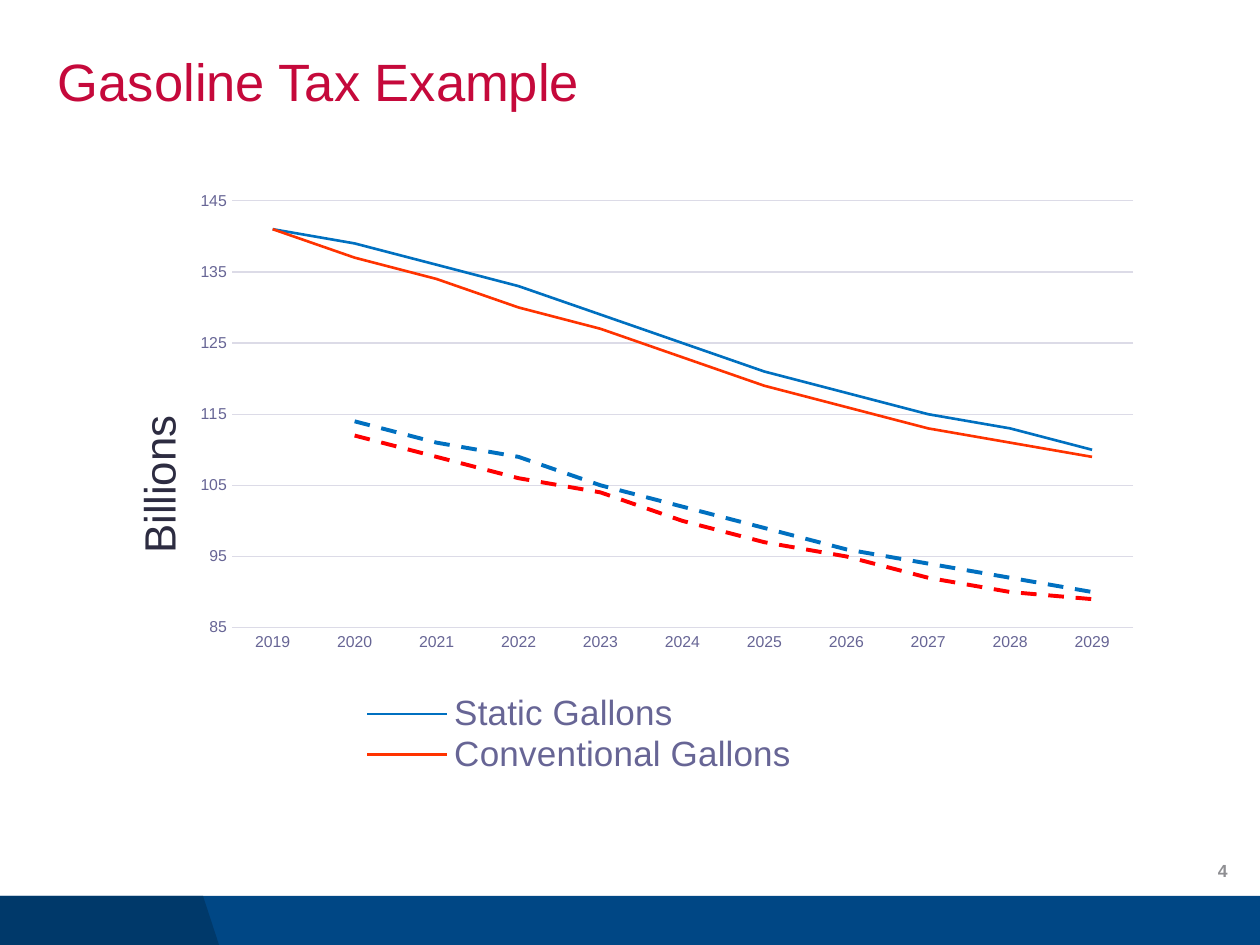
from lxml.etree import SubElement
from pptx import Presentation
from pptx.chart.data import CategoryChartData
from pptx.dml.color import RGBColor
from pptx.enum.chart import XL_CHART_TYPE, XL_LEGEND_POSITION, XL_TICK_MARK
from pptx.enum.dml import MSO_LINE
from pptx.enum.shapes import MSO_SHAPE
from pptx.enum.text import MSO_ANCHOR, PP_ALIGN
from pptx.oxml import parse_xml
from pptx.oxml.ns import nsdecls, qn
from pptx.util import Emu, Pt

PX = 914400 / 126
rgb = RGBColor.from_string


def box(*lengths):
    """Turn px lengths into EMU."""
    return [Emu(round(n * PX)) for n in lengths]


def style(font, size, color, bold=False):
    font.name, font.size, font.bold = "Arial", Pt(size), bold
    font.color.rgb = rgb(color)


prs = Presentation()
prs.slide_width, prs.slide_height = box(1260, 945)
s = prs.slides.add_slide(prs.slide_layouts[5])

# Footer band with a slanted darker end
band = s.shapes.add_shape(MSO_SHAPE.RECTANGLE, *box(0, 896, 1260, 49))
builder = s.shapes.build_freeform(0, 896, scale=PX)
builder.add_line_segments([(203, 896), (219, 945), (0, 945)])
for sp, color in ((band, "004785"), (builder.convert_to_shape(), "00396A")):
    sp.fill.solid()
    sp.fill.fore_color.rgb = rgb(color)
    sp.line.fill.background()
    sp.shadow.inherit = False

# Title
title = s.shapes.title
title.left, title.top, title.width, title.height = box(58, 50, 1086, 71)
tf = title.text_frame
tf.text = "Gasoline Tax Example"
tf.margin_left = tf.margin_right = 0
tf.vertical_anchor = MSO_ANCHOR.TOP
p = tf.paragraphs[0]
p.alignment, p.line_spacing = PP_ALIGN.LEFT, 0.9
style(p.runs[0].font, 30, "C5093B")

# Page number
tf = s.shapes.add_textbox(*box(956, 846, 284, 50)).text_frame
tf.text = "4"
tf.word_wrap = True
tf.vertical_anchor = MSO_ANCHOR.MIDDLE
p = tf.paragraphs[0]
p.alignment = PP_ALIGN.RIGHT
style(p.runs[0].font, 10, "8F8F93", bold=True)

# Chart: name, colour, width, dash, values
SERIES = [
    ("Static Gallons", "0070C0", 1.5, MSO_LINE.SOLID,
     [141, 139, 136, 133, 129, 125, 121, 118, 115, 113, 110]),
    ("Conventional Gallons", "FF3300", 1.5, MSO_LINE.SOLID,
     [141, 137, 134, 130, 127, 123, 119, 116, 113, 111, 109]),
    ("Static Revenue", "0070C0", 2.25, MSO_LINE.DASH,
     [None, 114, 111, 109, 105, 102, 99, 96, 94, 92, 90]),
    ("Conventional Revenue", "FF0000", 2.25, MSO_LINE.DASH,
     [None, 112, 109, 106, 104, 100, 97, 95, 92, 90, 89]),
]
data = CategoryChartData(number_format="0")
data.categories = [str(year) for year in range(2019, 2030)]
for name, *_, values in SERIES:
    data.add_series(name, values)
chart = s.shapes.add_chart(XL_CHART_TYPE.LINE, *box(58, 183, 1086, 593), data).chart
chart.has_title = False
style(chart.font, 10, "2D2C41")
chart.plots[0].vary_by_categories = False
for series, (_, color, width, dash, _) in zip(chart.plots[0].series, SERIES):
    series.smooth = False
    line = series.format.line
    line.color.rgb = rgb(color)
    line.width, line.dash_style = Pt(width), dash

cat, val = chart.category_axis, chart.value_axis
for axis in (cat, val):
    axis.major_tick_mark = axis.minor_tick_mark = XL_TICK_MARK.NONE
    style(axis.tick_labels.font, 9, "676595")
val.minimum_scale, val.maximum_scale, val.major_unit = 85, 145, 10
val.tick_labels.number_format = "0"
val.tick_labels.number_format_is_linked = False
val.format.line.fill.background()
val.has_major_gridlines = True
for line in (cat.format.line, val.major_gridlines.format.line):
    line.color.rgb = rgb("DCDBE7")
    line.width = Pt(0.75)

tf = val.axis_title.text_frame
tf.text = "Billions"
style(tf.paragraphs[0].runs[0].font, 25, "2D2C41")
chart.has_legend = True
legend = chart.legend
legend.position = XL_LEGEND_POSITION.BOTTOM
legend.include_in_layout = False
style(legend.font, 20, "676595")

# The revenue series stay out of the legend
root = chart.element
legend_xml = root.find(".//" + qn("c:legend"))
for place, idx in ((1, 2), (2, 3)):
    legend_xml.insert(place, parse_xml(
        f'<c:legendEntry {nsdecls("c")}><c:idx val="{idx}"/>'
        '<c:delete val="1"/></c:legendEntry>'))

# Manual layouts, as fractions of the chart
title_xml = root.find(".//" + qn("c:valAx")).find(qn("c:title"))
body = title_xml.find(".//" + qn("a:bodyPr"))
body.set("rot", "-5400000")
body.set("vert", "horz")
for parent, place, layout in (
    (root.find(".//" + qn("c:plotArea")), 0,
     dict(layoutTarget="inner", xMode="edge", yMode="edge", x=0.16, y=0.03, w=0.83, h=0.72)),
    (title_xml, 1, dict(xMode="edge", yMode="edge", x=0.06, y=0.38)),
    (legend_xml, 3, dict(xMode="edge", yMode="edge", x=0.28, y=0.86, w=0.4, h=0.14)),
):
    for old in parent.findall(qn("c:layout")):
        parent.remove(old)
    node = parse_xml(f'<c:layout {nsdecls("c")}><c:manualLayout/></c:layout>')
    for tag, value in layout.items():
        SubElement(node[0], qn("c:" + tag)).set("val", str(value))
    parent.insert(place, node)

prs.save("out.pptx")
